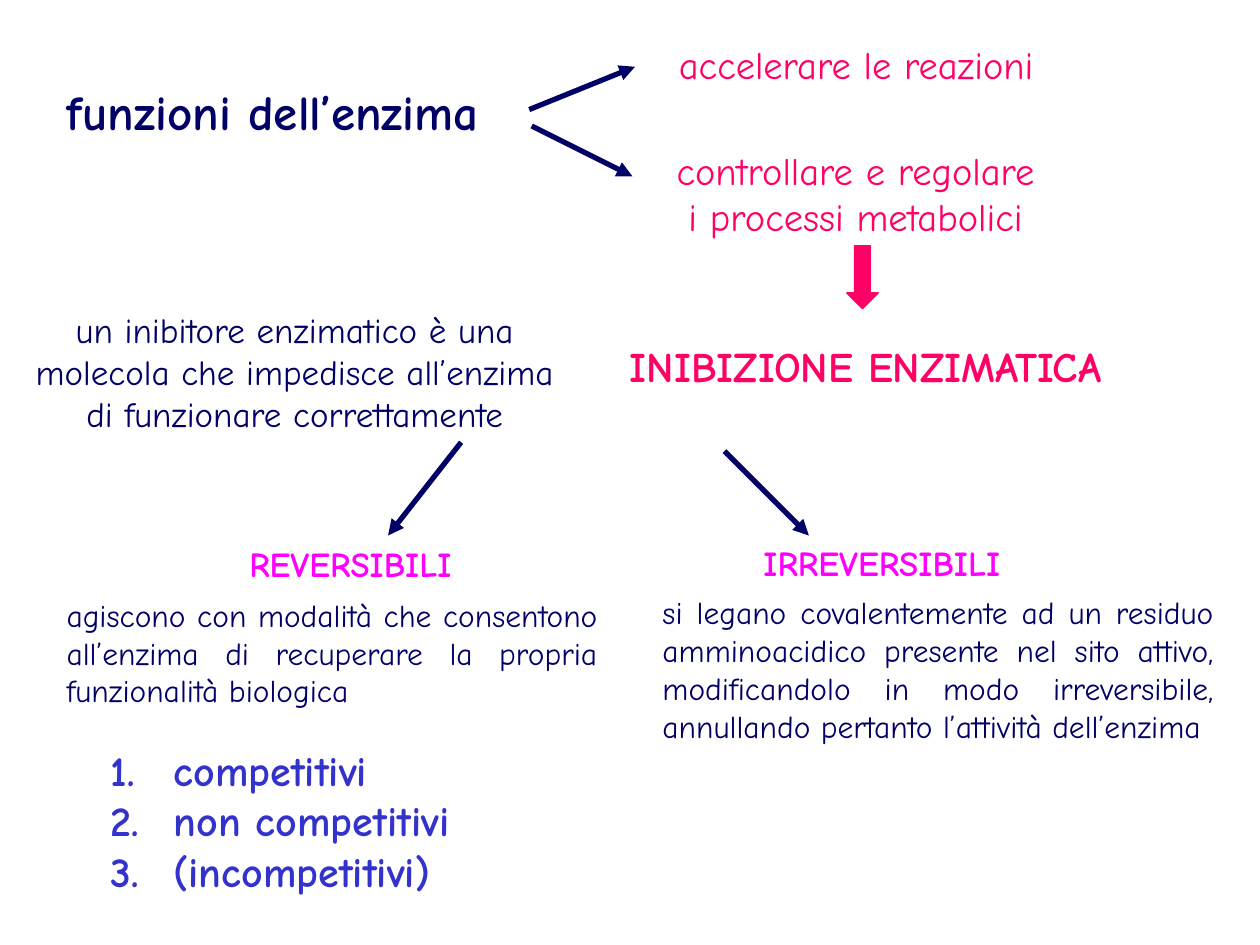
from lxml.etree import SubElement
from pptx import Presentation
from pptx.dml.color import RGBColor
from pptx.enum.shapes import MSO_CONNECTOR, MSO_SHAPE
from pptx.enum.text import MSO_ANCHOR, MSO_AUTO_SIZE, PP_ALIGN
from pptx.oxml.ns import qn
from pptx.util import Inches, Pt

FONT = "Comic Neue"
NAVY = "000066"
PINK = "FF0066"
MAGENTA = "FF00FF"
BLUE = "3333CC"


def color(value):
    return RGBColor.from_string(value)


def number_paragraph(paragraph):
    properties = paragraph._p.get_or_add_pPr()
    properties.set("marL", str(Inches(0.5)))
    properties.set("indent", str(Inches(-0.5)))
    SubElement(properties, qn("a:buFont"), typeface="+mj-lt")
    SubElement(properties, qn("a:buAutoNum"), type="arabicPeriod")


def write_text(shape, text, size=20, fill=NAVY, bold=False,
               align=PP_ALIGN.LEFT, wrap=False, numbered=False):
    frame = shape.text_frame
    frame.text = text
    frame.word_wrap = wrap
    frame.auto_size = MSO_AUTO_SIZE.SHAPE_TO_FIT_TEXT
    frame.vertical_anchor = MSO_ANCHOR.TOP
    for paragraph in frame.paragraphs:
        paragraph.alignment = align
        if numbered:
            number_paragraph(paragraph)
        for run in paragraph.runs:
            run.font.name = FONT
            run.font.size = Pt(size)
            run.font.bold = bold
            run.font.color.rgb = color(fill)


def add_title(slide, text, left, top, width, height, **text_format):
    title = slide.shapes.title
    title.left, title.top = Inches(left), Inches(top)
    title.width, title.height = Inches(width), Inches(height)
    write_text(title, text, **text_format)


def add_text(slide, text, left, top, width, height, **text_format):
    box = slide.shapes.add_textbox(
        Inches(left), Inches(top), Inches(width), Inches(height))
    write_text(box, text, **text_format)


def add_arrow(slide, start, end):
    arrow = slide.shapes.add_connector(
        MSO_CONNECTOR.STRAIGHT, *(Inches(value) for value in (*start, *end)))
    arrow.line.color.rgb = color(NAVY)
    arrow.line.width = Pt(3)
    SubElement(arrow.line._get_or_add_ln(), qn("a:tailEnd"), type="triangle")
    SubElement(arrow._element.spPr, qn("a:effectLst"))


def add_down_arrow(slide, left, top, width, height):
    shape = slide.shapes.add_shape(
        MSO_SHAPE.DOWN_ARROW,
        Inches(left), Inches(top), Inches(width), Inches(height))
    shape.shadow.inherit = False
    shape.fill.solid()
    shape.fill.fore_color.rgb = color(PINK)
    shape.line.color.rgb = color(PINK)
    shape.line.width = Pt(0.75)


def add_functions(slide):
    add_title(slide, "funzioni dell’enzima", 0.43, 0.6, 3.81, 0.57,
              size=28, bold=True)
    add_arrow(slide, (4.2, 0.87), (5.04, 0.53))
    add_arrow(slide, (4.22, 1), (5.02, 1.4))
    add_text(slide, "accelerare le reazioni", 5.29, 0.28, 3.3, 0.47,
             size=22, fill=PINK)
    add_text(slide, "controllare e regolare\ni processi metabolici",
             5.12, 1.12, 3.34, 0.84, size=22, fill=PINK,
             align=PP_ALIGN.CENTER)


def add_inhibition(slide):
    add_down_arrow(slide, 6.72, 1.95, 0.25, 0.5)
    add_text(slide, "INIBIZIONE ENZIMATICA", 4.17, 2.65, 5.4, 0.5,
             size=24, fill=PINK, bold=True, align=PP_ALIGN.CENTER, wrap=True)
    add_text(slide,
             "un inibitore enzimatico è una\n"
             "molecola che impedisce all’enzima\n"
             "di funzionare correttamente",
             0.03, 2.4, 4.62, 1.11, align=PP_ALIGN.CENTER)


def add_reversible(slide):
    add_arrow(slide, (3.66, 3.51), (3.08, 4.25))
    add_text(slide, "REVERSIBILI", 1.88, 4.26, 2.08, 0.44,
             fill=MAGENTA, bold=True)
    add_text(slide,
             "agiscono con modalità che consentono all’enzima di recuperare "
             "la propria funzionalità biologica",
             0.43, 4.68, 4.41, 1.01, size=18, align=PP_ALIGN.JUSTIFY,
             wrap=True)
    add_text(slide, "competitivi\nnon competitivi\n(incompetitivi)",
             0.78, 5.86, 3.12, 1.31, size=24, fill=BLUE, bold=True,
             numbered=True)


def add_irreversible(slide):
    add_arrow(slide, (5.75, 3.58), (6.42, 4.25))
    add_text(slide, "IRREVERSIBILI", 5.96, 4.25, 2.41, 0.44,
             fill=MAGENTA, bold=True)
    add_text(slide,
             "si legano covalentemente ad un residuo amminoacidico presente "
             "nel sito attivo, modificandolo in modo irreversibile, "
             "annullando pertanto l’attività dell’enzima",
             5.16, 4.66, 4.57, 1.62, size=18, align=PP_ALIGN.JUSTIFY,
             wrap=True)


def main():
    presentation = Presentation()
    presentation.slide_width = Inches(10)
    presentation.slide_height = Inches(7.5)
    slide = presentation.slides.add_slide(
        presentation.slide_layouts.get_by_name("Title Only"))
    add_functions(slide)
    add_inhibition(slide)
    add_reversible(slide)
    add_irreversible(slide)
    presentation.save("out.pptx")


if __name__ == "__main__":
    main()
